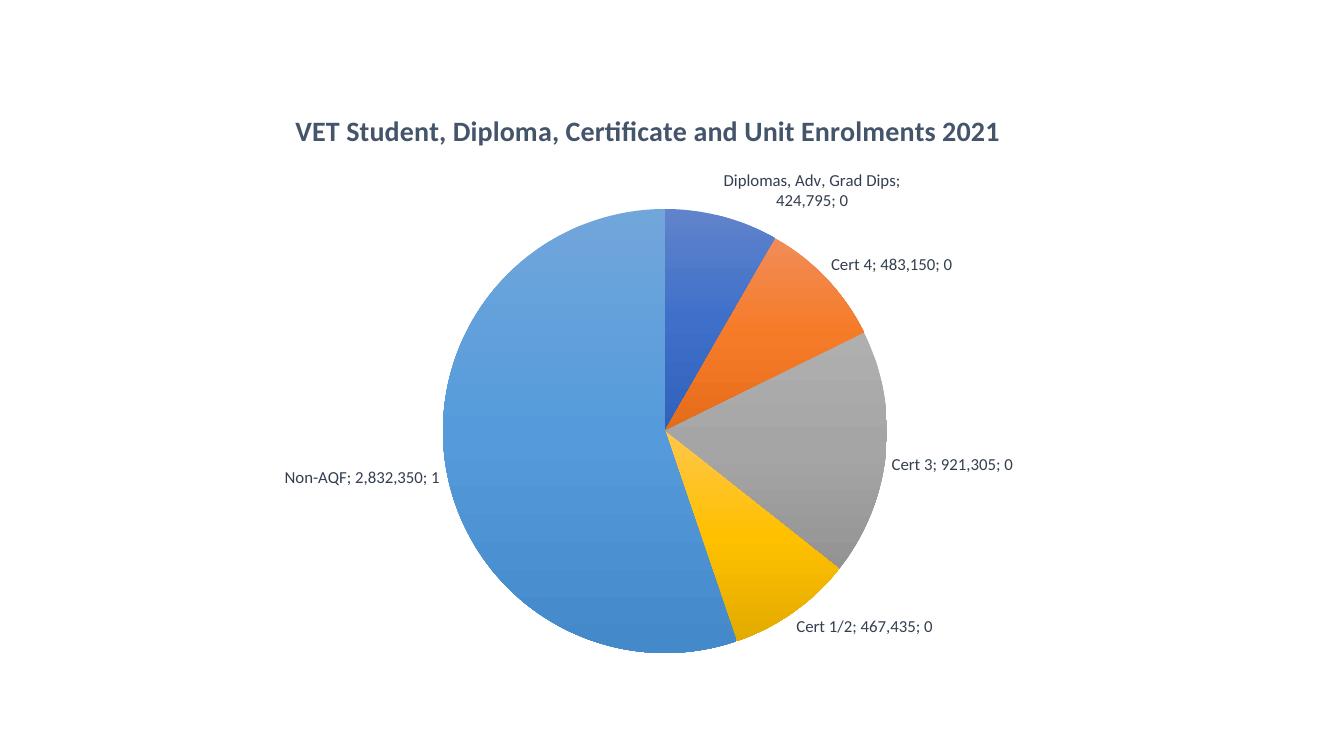
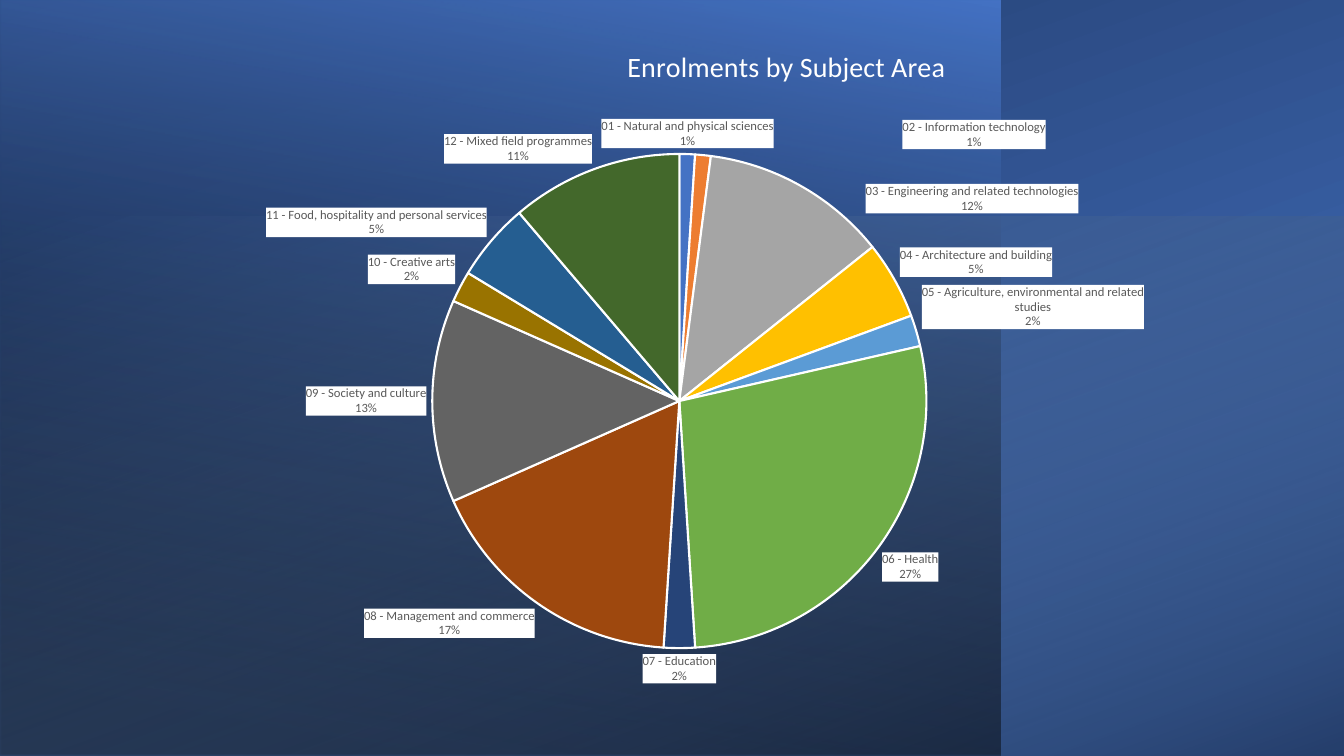
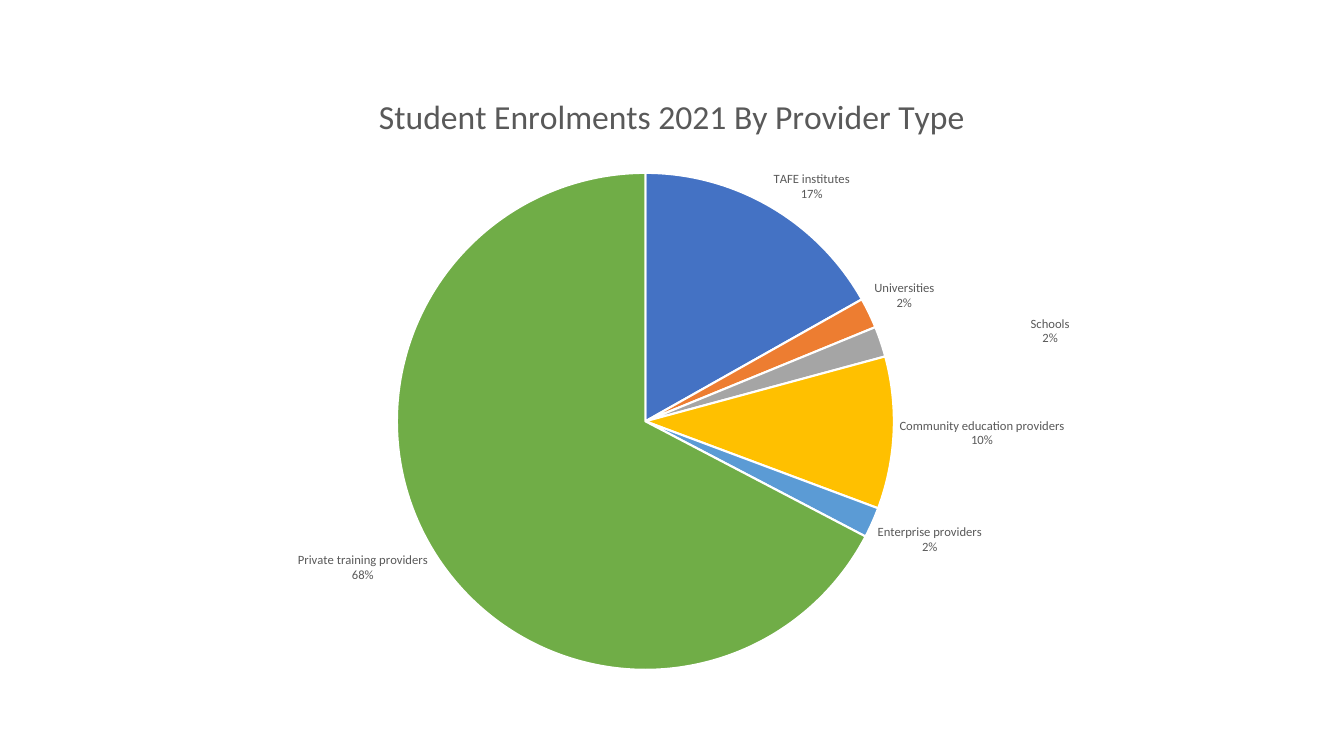
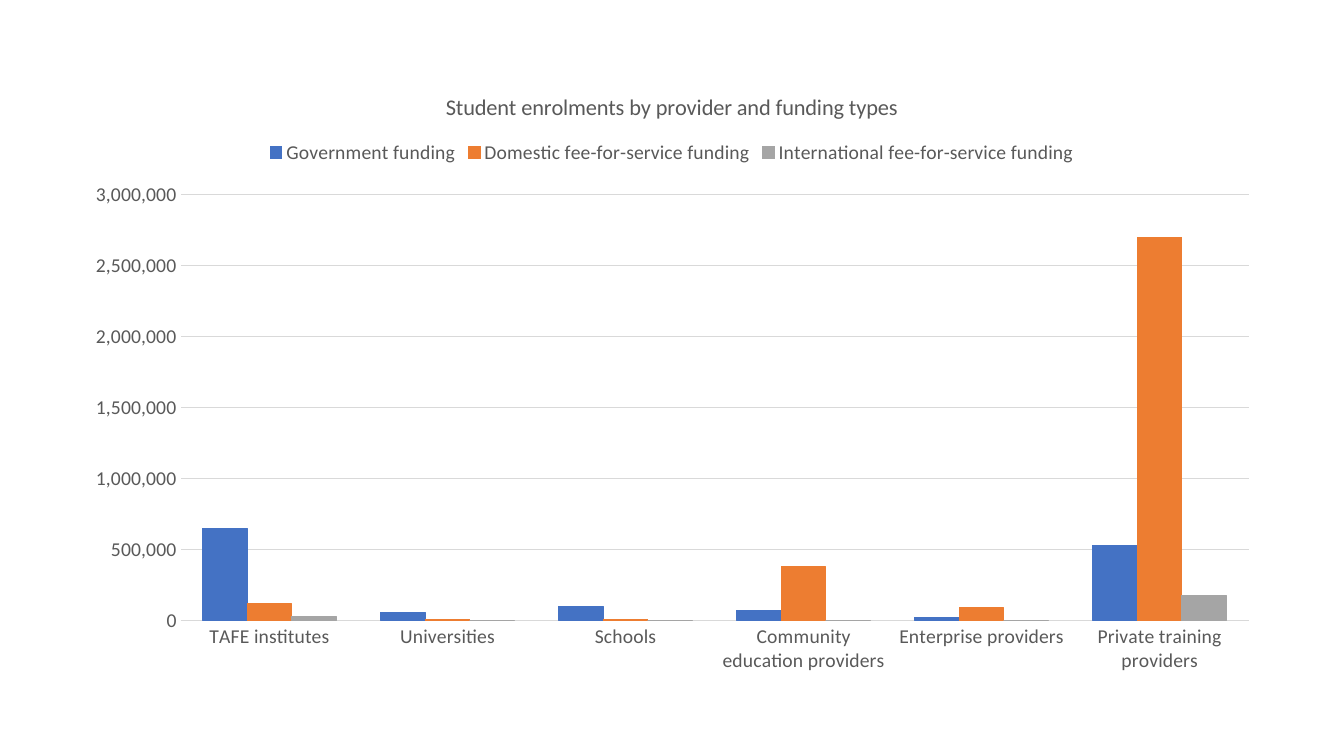
import copy
import dataclasses

import pptx
import pptx.chart.data
import pptx.dml.color
import pptx.enum.chart
import pptx.enum.shapes
import pptx.oxml
import pptx.oxml.ns
import pptx.util

Pt = pptx.util.Pt
NS = pptx.oxml.ns.nsdecls("a", "c")


@dataclasses.dataclass(frozen=True)
class Theme:
    face: str = "Calibri"
    white: str = "FFFFFF"
    grey: str = "595959"
    slate: str = "44546A"
    navy: str = "333F50"
    rule: str = "D9D9D9"
    deep: str = "203864"
    sky: str = "9DC3E6"
    black: str = "000000"
    hues: tuple = ("4472C4", "ED7D31", "A5A5A5", "FFC000", "5B9BD5",
                   "70AD47", "264478", "9E480E", "636363", "997300",
                   "255E91", "43682B", "698ED0")
    fades: tuple = (("6183CB", "3E70CA", "3062BB"),
                    ("F18C57", "F67B28", "E56C19"),
                    ("AFAFAF", "A5A5A5", "939393"),
                    ("FFC64B", "FFC000", "E3AB00"),
                    ("71A6DB", "559BDB", "448ACA"))
    tiny: int = 9
    small: int = 12
    body: int = 14
    head: int = 16
    large: int = 20
    huge: int = 24


T = Theme()
WIDTH, HEIGHT = 960, 540
WIDE = (50.4, 50.4, 859, 438.5)
TYPES = ("TAFE institutes", "Universities", "Schools",
         "Community education providers", "Enterprise providers",
         "Private training providers")
LEVELS = {"Diplomas, Adv, Grad Dips": 424795, "Cert 4": 483150,
          "Cert 3": 921305, "Cert 1/2": 467435, "Non-AQF": 2832350}
AREAS = {"01 - Natural and physical sciences": 1,
         "02 - Information technology": 1,
         "03 - Engineering and related technologies": 12,
         "04 - Architecture and building": 5,
         "05 - Agriculture, environmental and related studies": 2,
         "06 - Health": 27,
         "07 - Education": 2,
         "08 - Management and commerce": 17,
         "09 - Society and culture": 13,
         "10 - Creative arts": 2,
         "11 - Food, hospitality and personal services": 5,
         "12 - Mixed field programmes": 11,
         "Not known": 0}
SHARES = dict(zip(TYPES, (17, 2, 2, 10, 2, 68)))
FUNDS = {"Government funding":
         (650000, 60000, 100000, 70000, 20000, 530000),
         "Domestic fee-for-service funding":
         (120000, 10000, 10000, 380000, 90000, 2700000),
         "International fee-for-service funding":
         (30000, 0, 0, 0, 0, 180000)}


def rgb(hue):
    return pptx.dml.color.RGBColor.from_string(hue)


def style(font, size, hue, bold=False):
    font.name, font.size, font.bold = T.face, Pt(size), bold
    font.color.rgb = rgb(hue)


def write(frame, text, size=T.head, hue=T.grey, bold=False):
    frame.text = text
    style(frame.paragraphs[0].runs[0].font, size, hue, bold)


def paint(part, hue):
    part.fill.solid()
    part.fill.fore_color.rgb = rgb(hue)


def rule(line, hue, width=0.75):
    paint(line, hue)
    line.width = Pt(width)


def blend(old, stops, angle):
    marks = "".join(
        f'<a:gs pos="{spot * 1000}"><a:srgbClr val="{hue}">'
        f'<a:alpha val="{alpha * 1000}"/></a:srgbClr></a:gs>'
        for spot, hue, alpha in stops)
    new = pptx.oxml.parse_xml(
        f'<a:gradFill {NS}><a:gsLst>{marks}</a:gsLst>'
        f'<a:lin ang="{angle * 60000}" scaled="0"/></a:gradFill>')
    old.getparent().replace(old, new)


def panel(slide, box, turn, stops, angle):
    shape = slide.shapes.add_shape(
        pptx.enum.shapes.MSO_SHAPE.RECTANGLE, *map(Pt, box))
    shape.shadow.inherit = False
    shape.line.fill.background()
    shape.rotation = turn
    shape.element.spPr.xfrm.set("flipH", "1")
    shape.fill.gradient()
    blend(shape.element.xpath(".//a:gradFill")[0], stops, angle)


def layout(inner="", **spots):
    modes = "" if not inner else '<c:layoutTarget val="inner"/>'
    if inner != "shift":
        modes += '<c:xMode val="edge"/><c:yMode val="edge"/>'
    marks = "".join(f'<c:{key} val="{val:.4f}"/>'
                    for key, val in spots.items())
    return pptx.oxml.parse_xml(
        f"<c:layout {NS}><c:manualLayout>{modes}{marks}"
        f"</c:manualLayout></c:layout>")


def place(chart, box, plot):
    left, top, wide, high = box
    area = chart.element.xpath("c:chart/c:plotArea")[0]
    for old in area.xpath("c:layout"):
        area.remove(old)
    area.insert(0, layout("inner", x=(plot[0] - left) / wide,
                          y=(plot[1] - top) / high,
                          w=plot[2] / wide, h=plot[3] / high))


def graph(slide, kind, box, plot, cats, data, title, **form):
    source = pptx.chart.data.CategoryChartData(number_format="#,##0")
    source.categories = cats
    for name, vals in data.items():
        source.add_series(name, vals)
    chart = slide.shapes.add_chart(kind, *map(Pt, box), source).chart
    chart.font.name = T.face
    chart.has_legend = False
    chart.has_title = True
    write(chart.chart_title.text_frame, title, **form)
    chart.chart_title.include_in_layout = False
    place(chart, box, plot)
    return chart


def label(series, size, hue, pattern, split, share=False, back=None):
    tags = series.data_labels
    tags.show_category_name = tags.show_value = True
    tags.show_percentage = share
    tags.position = pptx.enum.chart.XL_LABEL_POSITION.OUTSIDE_END
    tags.number_format, tags.number_format_is_linked = pattern, False
    style(tags.font, size, hue)
    root = series.data_labels._element
    for lead in root.xpath("c:showLeaderLines"):
        root.remove(lead)
    for text in (f"<c:separator {NS}>{split}</c:separator>",
                 f'<c:showLeaderLines {NS} val="0"/>'):
        root.append(pptx.oxml.parse_xml(text))
    if back:
        root.xpath("c:txPr")[0].addprevious(pptx.oxml.parse_xml(
            f'<c:spPr {NS}><a:solidFill><a:srgbClr val="{back}"/>'
            f"</a:solidFill></c:spPr>"))
    return root


def shift(root, moves):
    parts = [part for part in root
             if not part.tag.endswith("showLeaderLines")]
    for spot, (index, (x, y)) in enumerate(moves.items()):
        tag = pptx.oxml.parse_xml(
            f'<c:dLbl {NS}><c:idx val="{index}"/></c:dLbl>')
        move = layout(x=x, y=y)
        for mode in move.xpath(".//c:xMode | .//c:yMode"):
            mode.getparent().remove(mode)
        tag.append(move)
        tag.extend(copy.deepcopy(part) for part in parts)
        root.insert(spot, tag)


def pie(slide, box, plot, data, title, **form):
    left, top, size = plot
    chart = graph(slide, pptx.enum.chart.XL_CHART_TYPE.PIE, box,
                  (left, top, size, size), list(data),
                  {"Series 1": list(data.values())}, title, **form)
    return chart, chart.plots[0].series[0]


def slices(series, count):
    for index in range(count):
        part = series.points[index].format
        paint(part, T.hues[index])
        rule(part.line, T.white, 1.5)


def levels(slide):
    chart, series = pie(slide, (100.8, 63.4, 724.3, 416.2),
                        (316.4, 149.3, 317.2), LEVELS,
                        "VET Student, Diploma, Certificate and "
                        "Unit Enrolments 2021",
                        size=T.large, hue=T.slate, bold=True)
    for index in range(len(LEVELS)):
        part = series.points[index].format
        part.fill.gradient()
        part.line.fill.background()
    olds = chart.element.xpath(".//c:dPt//a:gradFill")
    for old, fade in zip(olds, T.fades):
        blend(old, [(50 * step, hue, 100)
                    for step, hue in enumerate(fade)], 90)
    label(series, T.small, T.navy, "#,##0", "; ", share=True)


def areas(slide):
    blue = T.hues[0]
    panel(slide, (210, -210, HEIGHT, WIDTH), 270,
          [(8, blue, 100), (100, T.deep, 100)], 200)
    panel(slide, (0, 0, 714.3, HEIGHT), 180,
          [(8, T.black, 52), (100, blue, 100)], 80)
    panel(slide, (287.2, -132.6, 385.4, WIDTH), 270,
          [(0, T.sky, 0), (100, T.black, 46)], 20)
    chart, series = pie(slide, (36, 29.5, 888, 468), (308.8, 110, 353),
                        AREAS, "Enrolments by Subject Area",
                        size=T.large, hue=T.white)
    old = chart.element.xpath("c:chart/c:title/c:layout")
    for part in old:
        part.getparent().remove(part)
    chart.element.xpath("c:chart/c:title/c:tx")[0].addnext(
        layout(x=0.46, y=0))
    slices(series, len(AREAS))
    root = label(series, T.tiny, T.grey, '0"%"', "\n", back=T.white)
    shift(root, {1: (0.16, 0), 2: (0.05, 0.05), 12: (-0.31, 0)})


def shares(slide):
    chart, series = pie(slide, WIDE, (283.5, 123.5, 355), SHARES,
                        "Student Enrolments 2021 By Provider Type",
                        size=T.huge)
    slices(series, len(SHARES))
    root = label(series, T.tiny, T.grey, '0"%"', "\n")
    shift(root, {2: (0.12, 0.01)})


def funds(slide):
    enum = pptx.enum.chart
    chart = graph(slide, enum.XL_CHART_TYPE.COLUMN_CLUSTERED, WIDE,
                  (129, 139, 763, 304.5), TYPES, FUNDS,
                  "Student enrolments by provider and funding types")
    plot = chart.plots[0]
    plot.gap_width, plot.overlap = 100, 0
    plot.vary_by_categories = False
    for series, hue in zip(plot.series, T.hues):
        paint(series.format, hue)
        rule(series.format.line, hue)
    for axis in (chart.category_axis, chart.value_axis):
        axis.major_tick_mark = enum.XL_TICK_MARK.NONE
        axis.minor_tick_mark = enum.XL_TICK_MARK.NONE
        style(axis.tick_labels.font, T.body, T.grey)
    rule(chart.category_axis.format.line, T.rule)
    axis = chart.value_axis
    axis.format.line.fill.background()
    axis.minimum_scale, axis.maximum_scale = 0, 3000000
    axis.major_unit = 500000
    rule(axis.major_gridlines.format.line, T.rule)
    axis.tick_labels.number_format = "#,##0"
    axis.tick_labels.number_format_is_linked = False
    chart.has_legend = True
    chart.legend.position = enum.XL_LEGEND_POSITION.TOP
    chart.legend.include_in_layout = False
    style(chart.legend.font, T.body, T.grey)


def main():
    deck = pptx.Presentation()
    deck.slide_width, deck.slide_height = Pt(WIDTH), Pt(HEIGHT)
    for build in (levels, areas, shares, funds):
        build(deck.slides.add_slide(deck.slide_layouts[6]))
    deck.save("out.pptx")


if __name__ == "__main__":
    main()
